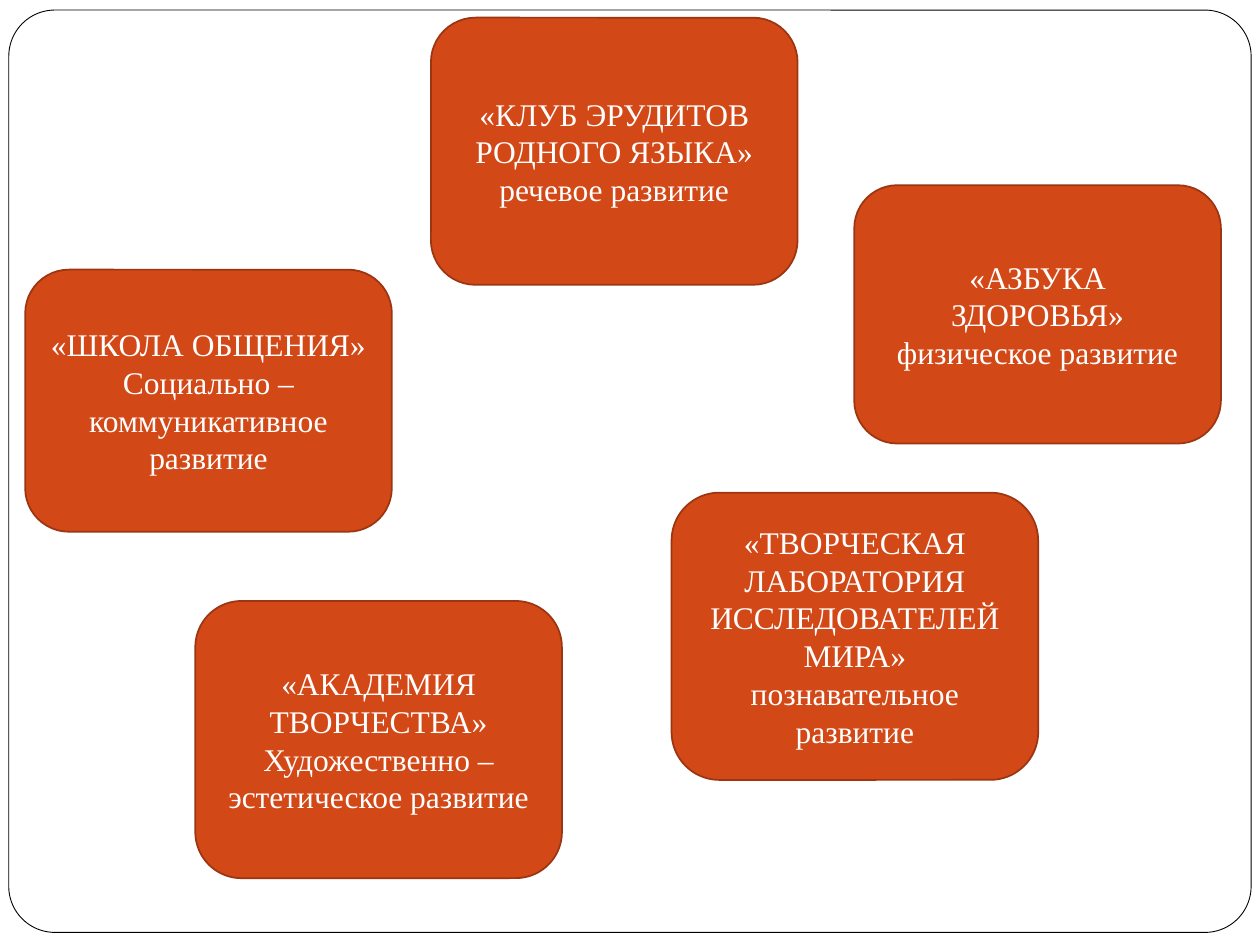
from pptx import Presentation
from pptx.dml.color import RGBColor
from pptx.enum.shapes import MSO_SHAPE
from pptx.enum.text import MSO_ANCHOR, PP_ALIGN
from pptx.util import Inches, Pt

COLORS = {"paper": "FFFFFF", "frame": "000000", "card": "D34817", "edge": "9C3511", "text": "FFFFFF"}
FONT = {"name": "Times New Roman", "size": Pt(18)}
CARD_WIDTH = 2.91
CARDS = [
    (0.2, 2.14, 2.08, "«ШКОЛА ОБЩЕНИЯ»", "Социально –коммуникативное развитие"),
    (1.55, 4.77, 2.2, "«АКАДЕМИЯ ТВОРЧЕСТВА»", "Художественно – эстетическое развитие"),
    (3.42, 0.14, 2.12, "«КЛУБ ЭРУДИТОВ РОДНОГО ЯЗЫКА»", "речевое развитие"),
    (5.33, 3.91, 2.28, "«ТВОРЧЕСКАЯ ЛАБОРАТОРИЯ ИССЛЕДОВАТЕЛЕЙ МИРА»", "познавательное развитие"),
    (6.78, 1.47, 2.05, "«АЗБУКА ЗДОРОВЬЯ»", "физическое развитие"),
]


def color(name):
    """Return the named colour."""
    return RGBColor.from_string(COLORS[name])


def add_rounded_box(page, box, fill, line, weight):
    """Add a flat rounded rectangle in a box of left, top, width, height."""
    shape = page.shapes.add_shape(MSO_SHAPE.ROUNDED_RECTANGLE, *map(Inches, box))
    shape.shadow.inherit = False
    shape.fill.solid()
    shape.fill.fore_color.rgb = color(fill)
    shape.line.color.rgb = color(line)
    shape.line.width = Pt(weight)
    return shape


def add_frame(page, box):
    """Draw the thin frame around the page."""
    frame = add_rounded_box(page, box, "paper", "frame", 0.5)
    frame.adjustments[0] = 0.05


def add_card(page, box, lines):
    """Draw a card with a centred paragraph for each line."""
    text_frame = add_rounded_box(page, box, "card", "edge", 1).text_frame
    text_frame.word_wrap = True
    text_frame.vertical_anchor = MSO_ANCHOR.MIDDLE
    text_frame.text = "\n".join(lines)
    for para in text_frame.paragraphs:
        para.alignment = PP_ALIGN.CENTER
        for span in para.runs:
            for key, value in FONT.items():
                setattr(span.font, key, value)
            span.font.color.rgb = color("text")


def main():
    """Build and save the deck."""
    deck = Presentation()
    deck.slide_width, deck.slide_height = Inches(10), Inches(7.5)
    page = deck.slides.add_slide(deck.slide_layouts[6])
    add_frame(page, (0.07, 0.08, 9.86, 7.32))
    for left, top, height, *lines in CARDS:
        add_card(page, (left, top, CARD_WIDTH, height), lines)
    deck.save("out.pptx")


if __name__ == "__main__":
    main()
